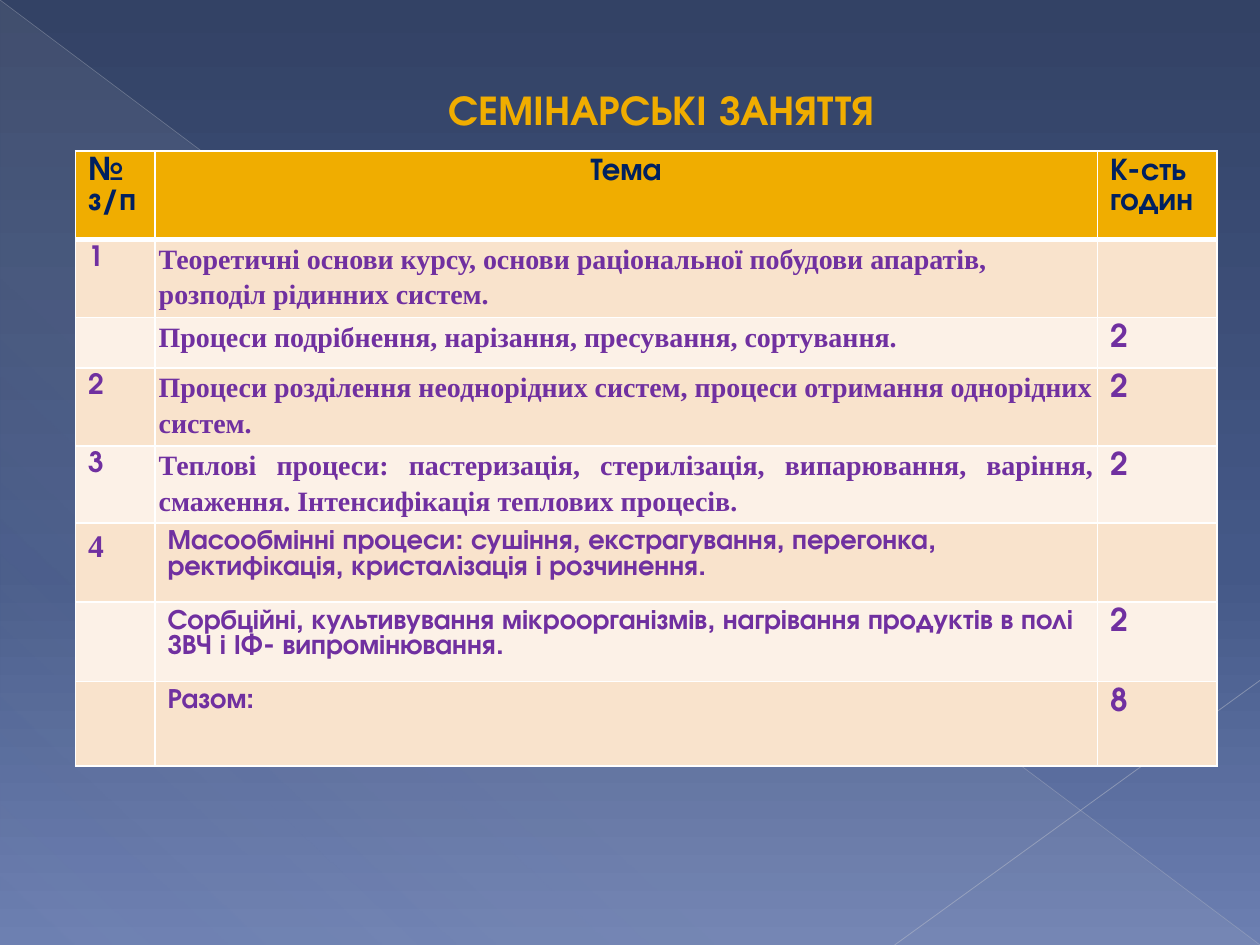
from lxml.etree import SubElement
from pptx import Presentation
from pptx.dml.color import RGBColor as Color
from pptx.enum.shapes import MSO_CONNECTOR as Connector, MSO_SHAPE as Shape
from pptx.enum.text import MSO_ANCHOR as Anchor, PP_ALIGN as Align
from pptx.oxml.ns import qn
from pptx.util import Inches, Pt

GOLD = Color(0xF0, 0xAD, 0x00)
NAVY = Color(0x00, 0x20, 0x60)
PURPLE = Color(0x70, 0x30, 0xA0)
WHITE = Color(0xFF, 0xFF, 0xFF)
PEACH = Color(0xF9, 0xE3, 0xCC)
CREAM = Color(0xFC, 0xF1, 0xE7)
MIST = Color(0xD4, 0xD4, 0xD6)
LONG_RAY = Color(0xB9, 0xBD, 0xC8)
SHORT_RAY = Color(0xC1, 0xC4, 0xCE)
SKY = [(0, Color(0x33, 0x42, 0x65), 100), (60, Color(0x44, 0x58, 0x87), 100),
       (100, Color(0x6C, 0x7F, 0xB1), 100)]
VEIL = [(0, MIST, 10), (70, MIST, 8), (100, MIST, 1)]

SANS = "TeX Gyre Adventor"
SERIF = "Times New Roman"

COLUMNS = [0.63, 7.48, 0.95]
ROWS = [0.7, 0.62, 0.4, 0.62, 0.61, 0.63, 0.63, 0.67]
HEADER = ["№\nз/п", "Тема", "К-сть\nгодин"]
TOPICS = [
    ("1", "Теоретичні основи курсу, основи раціональної побудови апаратів, "
          "розподіл рідинних систем.", ""),
    ("", "Процеси подрібнення, нарізання, пресування, сортування.", "2"),
    ("2", "Процеси розділення неоднорідних систем, процеси отримання "
          "однорідних систем.", "2"),
    ("3", "Теплові процеси: пастеризація, стерилізація, випарювання, варіння, "
          "смаження. Інтенсифікація теплових процесів.", "2"),
    ("4", "Масообмінні процеси: сушіння, екстрагування, перегонка, "
          "ректифікація, кристалізація і розчинення.", ""),
    ("", "Сорбційні, культивування мікроорганізмів, нагрівання продуктів в полі "
         "ЗВЧ і ІФ- випромінювання.", "2"),
    ("", "Разом:", "8"),
]
SERIF_ROWS = range(1, 5)
JUSTIFIED_ROW = 4
SERIF_NUMBER_ROW = 5


class SlideBuilder:
    def __init__(self, deck):
        self.width, self.height = deck.slide_width, deck.slide_height
        self.slide = deck.slides.add_slide(deck.slide_layouts[5])

    def place(self, x, y):
        return round(x * self.width), round(y * self.height)

    def add_color(self, parent, color, opacity):
        node = SubElement(parent, qn("a:srgbClr"), val=str(color))
        if opacity < 100:
            SubElement(node, qn("a:alpha"), val=str(opacity * 1000))

    def gradient(self, fill, owner, stops, angle):
        fill.gradient()
        fill.gradient_angle = 360 - angle
        stop_list = owner.xpath(".//a:gradFill/a:gsLst")[0]
        for old in list(stop_list):
            stop_list.remove(old)
        for position, color, opacity in stops:
            stop = SubElement(stop_list, qn("a:gs"), pos=str(position * 1000))
            self.add_color(stop, color, opacity)

    def background(self, stops):
        self.gradient(self.slide.background.fill, self.slide.element, stops, 90)

    def triangle(self, x, y, width, height, stops, angle):
        shape = self.slide.shapes.add_shape(
            Shape.RIGHT_TRIANGLE, *self.place(x, y), *self.place(width, height))
        shape.shadow.inherit = False
        shape.line.fill.background()
        self.gradient(shape.fill, shape.element, stops, angle)

    def ray(self, start, end, color, weight, opacity):
        line = self.slide.shapes.add_connector(
            Connector.STRAIGHT, *self.place(*start), *self.place(*end))
        line.line.width = Pt(weight)
        line.line.color.rgb = color
        node = line.element.xpath(".//a:ln//a:srgbClr")[0]
        SubElement(node, qn("a:alpha"), val=str(opacity * 1000))
        SubElement(line.element.spPr, qn("a:effectLst"))

    def style(self, para, size, color, name=SANS):
        font = para.font
        font.size, font.bold, font.name = Pt(size), True, name
        font.color.rgb = color

    def title(self, text, x, y, width, height):
        box = self.slide.shapes.title
        box.left, box.top = self.place(x, y)
        box.width, box.height = self.place(width, height)
        frame = box.text_frame
        frame.text = text
        frame.vertical_anchor = Anchor.MIDDLE
        para = frame.paragraphs[0]
        para.alignment = Align.CENTER
        self.style(para, 24, GOLD)
        self.slide.shapes.element.append(box.element)

    def borders(self, cell, top, bottom):
        properties = cell.fill._xPr
        sides = [("L", 1), ("R", 1), ("T", top), ("B", bottom)]
        for index, (side, weight) in enumerate(sides):
            line = SubElement(properties, qn(f"a:ln{side}"), w=str(Pt(weight)))
            self.add_color(SubElement(line, qn("a:solidFill")), WHITE, 100)
            properties.insert(index, line)

    def cell(self, cell, text, fill, size, color, name=SANS, align=Align.LEFT):
        cell.text = text
        cell.fill.solid()
        cell.fill.fore_color.rgb = fill
        for para in cell.text_frame.paragraphs:
            para.alignment = align
            self.style(para, size, color, name)

    def topic_row(self, cells, row, texts):
        fill = PEACH if row % 2 else CREAM
        number, topic, hours = cells
        serif_number = row == SERIF_NUMBER_ROW
        self.cell(number, texts[0], fill, 18 if serif_number else 16, PURPLE,
                  SERIF if serif_number else SANS)
        self.cell(topic, texts[1], fill, 16, PURPLE,
                  SERIF if row in SERIF_ROWS else SANS,
                  Align.JUSTIFY if row == JUSTIFIED_ROW else Align.LEFT)
        self.cell(hours, texts[2], fill, 18, PURPLE)
        if row in SERIF_ROWS:
            topic.margin_left = topic.margin_right = Inches(0.03)
            topic.margin_top = topic.margin_bottom = 0
            topic.text_frame.paragraphs[0].line_spacing = 1.15

    def table(self, x, y, columns, rows, header, topics):
        table = self.slide.shapes.add_table(
            len(rows), len(columns), *self.place(x, y),
            Inches(sum(columns)), Inches(sum(rows))).table
        table.horz_banding = False
        for column, width in zip(table.columns, columns):
            column.width = Inches(width)
        for row, height in zip(table.rows, rows):
            row.height = Inches(height)
        for index, text in enumerate(header):
            self.cell(table.cell(0, index), text, GOLD, 18, NAVY,
                      align=Align.CENTER if index == 1 else Align.LEFT)
        for row, texts in enumerate(topics, 1):
            self.topic_row(table.rows[row].cells, row, texts)
        for row in range(len(rows)):
            for cell in table.rows[row].cells:
                self.borders(cell, 3 if row == 1 else 1, 3 if row == 0 else 1)


def main():
    deck = Presentation()
    deck.slide_width, deck.slide_height = Inches(10), Inches(7.5)
    page = SlideBuilder(deck)
    page.background(SKY)
    page.triangle(0, 0, 1, 1, VEIL, 133)
    page.ray((0, 0), (1, 1), LONG_RAY, 0.39, 35)
    page.ray((1, 0.72), (0.71, 1), SHORT_RAY, 0.47, 45)
    page.title("СЕМІНАРСЬКІ ЗАНЯТТЯ", 0.14, 0.08, 0.77, 0.07)
    page.table(0.06, 0.16, COLUMNS, ROWS, HEADER, TOPICS)
    deck.save("out.pptx")


if __name__ == "__main__":
    main()
